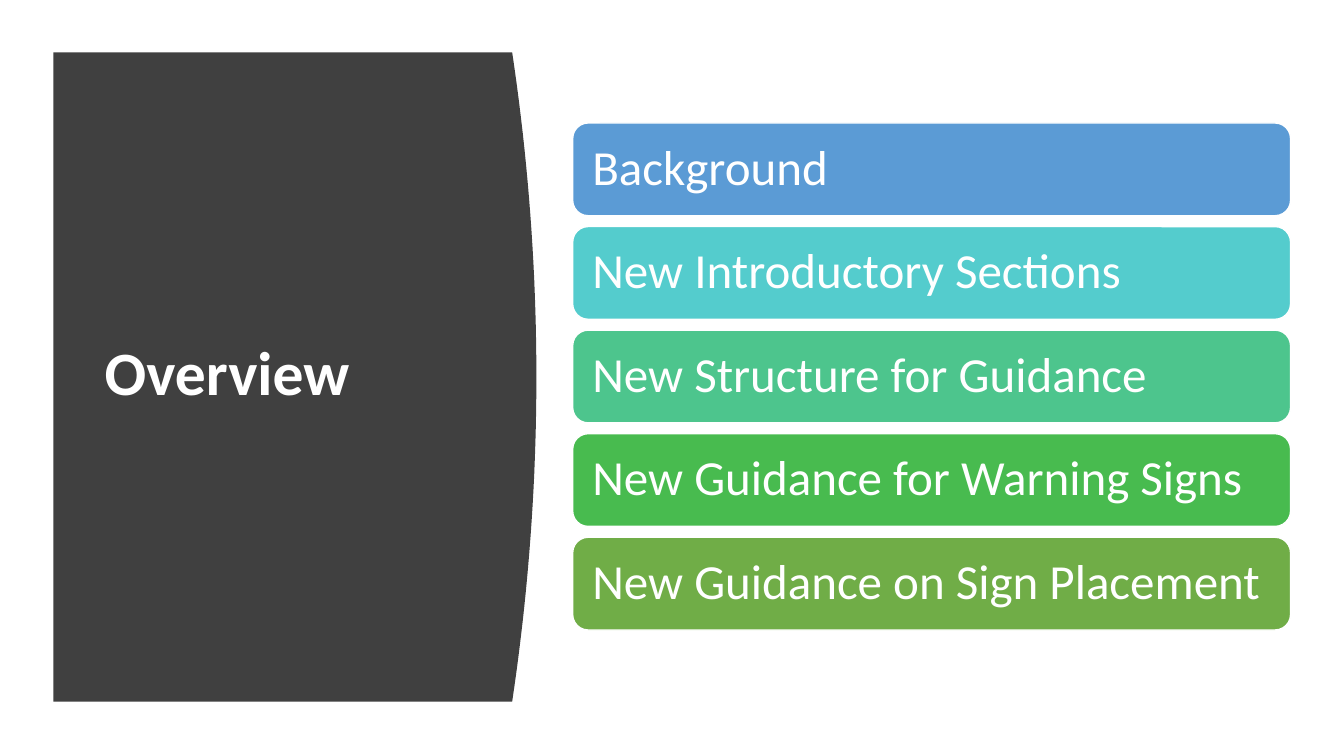
from pptx import Presentation
from pptx.dml.color import RGBColor
from pptx.enum.shapes import MSO_SHAPE as Shape
from pptx.enum.text import MSO_ANCHOR as Anchor, PP_ALIGN as Align
from pptx.util import Inches, Pt

WHITE = RGBColor(0xFF, 0xFF, 0xFF)
DARK = RGBColor(0x40, 0x40, 0x40)
BLUE = RGBColor(0x5B, 0x9B, 0xD5)
AQUA = RGBColor(0x54, 0xCC, 0xCD)
MINT = RGBColor(0x4D, 0xC5, 0x8D)
GREEN = RGBColor(0x48, 0xBB, 0x4F)
OLIVE = RGBColor(0x70, 0xAD, 0x47)

TOPICS = [
    ("Background", BLUE),
    ("New Introductory Sections", AQUA),
    ("New Structure for Guidance", MINT),
    ("New Guidance for Warning Signs", GREEN),
    ("New Guidance on Sign Placement", OLIVE),
]
FIRST, LAST = 1.22, 5.33  # tops of the outer bars


def write(shape, text, size, inset, bold=False):
    """Put one line of white text, centred in height, in a shape."""
    frame = shape.text_frame
    frame.word_wrap = True
    frame.vertical_anchor = Anchor.MIDDLE
    frame.margin_left = frame.margin_right = Inches(inset)
    para = frame.paragraphs[0]
    para.text = text
    para.alignment = Align.LEFT
    para.line_spacing = 0.9
    font = para.font
    font.name, font.size, font.bold = "Calibri", Pt(size), bold
    font.color.rgb = WHITE


def add_panel(slide):
    """Draw the dark panel, its right edge bowed as a parabola."""
    left, top, foot = 0.53, 0.52, 6.96
    edge, bulge, steps = 5.08, 0.24, 40
    curve = []
    for i in range(steps + 1):
        t = i / steps
        x = edge + bulge * 4 * t * (1 - t)
        curve.append((Inches(x), Inches(top + (foot - top) * t)))
    form = slide.shapes.build_freeform(Inches(left), Inches(top))
    form.add_line_segments(curve + [(Inches(left), Inches(foot))], close=True)
    panel = form.convert_to_shape()
    panel.shadow.inherit = False
    panel.fill.solid()
    panel.fill.fore_color.rgb = DARK
    panel.line.fill.background()


def add_title(slide, text):
    box = slide.shapes.add_textbox(
        Inches(0.94), Inches(1.11), Inches(3.74), Inches(5.24))
    write(box, text, 44, 0.1, bold=True)


def add_bar(slide, top, text, color):
    bar = slide.shapes.add_shape(
        Shape.ROUNDED_RECTANGLE,
        Inches(5.68), Inches(top), Inches(7.12), Inches(0.92))
    bar.shadow.inherit = False
    bar.fill.solid()
    bar.fill.fore_color.rgb = color
    bar.line.color.rgb = WHITE
    bar.line.width = Pt(1)
    write(bar, text, 35, 0.15)


def main():
    deck = Presentation()
    deck.slide_width, deck.slide_height = Inches(13.33), Inches(7.5)
    slide = deck.slides.add_slide(deck.slide_layouts[6])

    # Left side: panel and title
    add_panel(slide)
    add_title(slide, "Overview")

    # Right side: one bar per topic, evenly spaced
    step = (LAST - FIRST) / (len(TOPICS) - 1)
    for i, (text, color) in enumerate(TOPICS):
        add_bar(slide, FIRST + i * step, text, color)

    deck.save("out.pptx")


if __name__ == "__main__":
    main()
